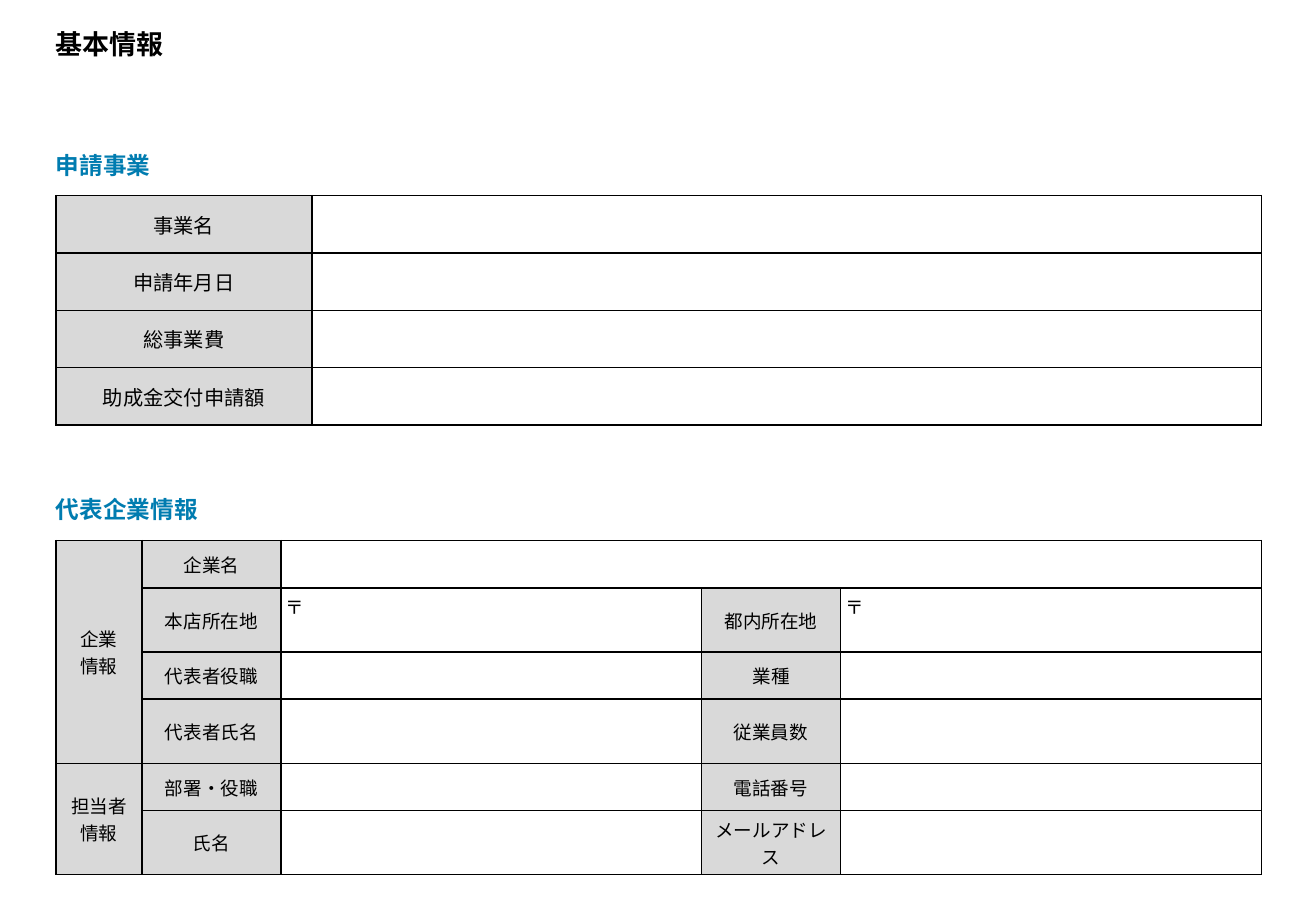
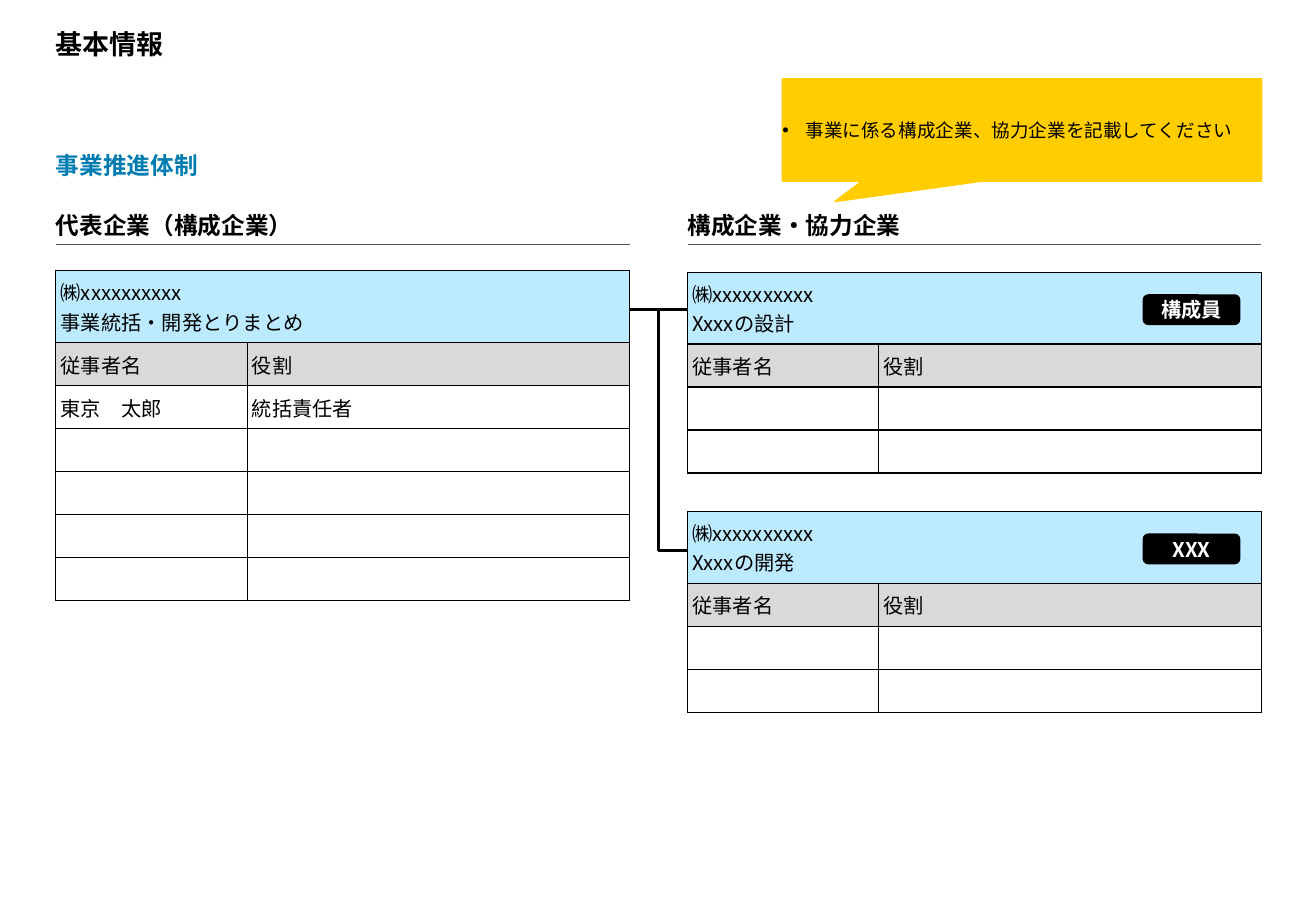
from dataclasses import dataclass

from lxml.etree import SubElement
from pptx import Presentation
from pptx.dml.color import RGBColor as RGB
from pptx.enum.shapes import MSO_CONNECTOR as LINK, MSO_SHAPE as SHAPE
from pptx.enum.text import MSO_ANCHOR as ANCHOR, PP_ALIGN as ALIGN
from pptx.oxml.ns import qn
from pptx.util import Inches, Pt


@dataclass(frozen=True)
class Theme:
    font: str = "Noto Sans CJK JP"
    form_font: str = "Arial"
    black: str = "000000"
    white: str = "FFFFFF"
    accent: str = "007CB0"
    label: str = "D9D9D9"
    company: str = "BCEBFF"
    note: str = "FFCD00"
    rule: str = "53565A"
    title: int = 16
    heading: int = 14
    body: int = 12
    small: int = 11


@dataclass(frozen=True)
class Cell:
    text: str = ""
    fill: str = ""
    align: ALIGN = ALIGN.LEFT
    anchor: ANCHOR = ANCHOR.MIDDLE
    span: tuple = (1, 1)


T = Theme()
SLIDE_W, SLIDE_H = 10.83, 7.5
LEFT, WIDTH, HALF = 4.25, 91.6, 43.6
RIGHT = LEFT + WIDTH - HALF
BLANK = Cell()


def col(n):
    return Inches(SLIDE_W * n / 100)


def row(n):
    return Inches(SLIDE_H * n / 100)


def grid(x, y, w, h):
    return col(x), row(y), col(w), row(h)


def write(tf, text, size, color=T.black, bold=False, align=ALIGN.LEFT, font=T.font):
    for i, line in enumerate(text.split("\n")):
        p = tf.paragraphs[0] if i == 0 else tf.add_paragraph()
        p.alignment = align
        if not line:
            SubElement(p._p, qn("a:endParaRPr"), sz=str(size * 100))
            continue
        r = p.add_run()
        r.text = line
        r.font.size, r.font.bold, r.font.name = Pt(size), bold, font
        r.font.color.rgb = RGB.from_string(color)
        SubElement(r._r.get_or_add_rPr(), qn("a:ea"), typeface=T.font)


def frame(sp):
    tf = sp.text_frame
    tf.word_wrap = True
    tf.vertical_anchor = ANCHOR.MIDDLE
    tf.margin_left = tf.margin_right = tf.margin_top = tf.margin_bottom = 0
    return tf


def text(s, x, y, w, h, words, size, color=T.black):
    tf = frame(s.shapes.add_textbox(*grid(x, y, w, h)))
    write(tf, words, size, color, bold=True)
    return tf


def title(s, words):
    tf = text(s, LEFT, 2.27, WIDTH, 4.67, words, T.title)
    tf.paragraphs[0].line_spacing = 1.1


def heading(s, y, words):
    text(s, LEFT, y, HALF, 6.8, words, T.heading, T.accent)


def line(s, x1, y1, x2, y2, color=T.black, width=1.5, kind=LINK.STRAIGHT):
    sp = s.shapes.add_connector(kind, col(x1), row(y1), col(x2), row(y2))
    sp.line.color.rgb = RGB.from_string(color)
    sp.line.width = Pt(width)
    SubElement(sp._element.spPr, qn("a:effectLst"))
    return sp


def elbow(s, x1, y1, x2, y2):
    sp = line(s, x1, y1, x2, y2, kind=LINK.ELBOW)
    guides = sp._element.spPr.find(qn("a:prstGeom")).get_or_add_avLst()
    SubElement(guides, qn("a:gd"), name="adj1", fmla="val 0")


def column_title(s, x, words):
    text(s, x, 23.07, HALF, 3.2, words, T.heading)
    line(s, x, 26.8, x + HALF, 26.8, T.rule, 0.75)


def block(s, kind, x, y, w, h, color):
    sp = s.shapes.add_shape(kind, *grid(x, y, w, h))
    sp.shadow.inherit = False
    sp.fill.solid()
    sp.fill.fore_color.rgb = sp.line.color.rgb = RGB.from_string(color)
    sp.line.width = Pt(1)
    return sp


def badge(s, y, words):
    sp = block(s, SHAPE.ROUNDED_RECTANGLE, 86.89, y, 7.3, 3.2, T.black)
    write(frame(sp), words, T.body, T.white, True, ALIGN.CENTER)


def callout(s, words):
    sp = block(s, SHAPE.RECTANGULAR_CALLOUT, 59.46, 8.67, 36.4, 11.2, T.note)
    sp.adjustments[0], sp.adjustments[1] = -0.39, 0.7
    tf = frame(sp)
    pPr = tf.paragraphs[0]._p.get_or_add_pPr()
    pPr.set("marL", str(Inches(0.19)))
    pPr.set("indent", str(-Inches(0.19)))
    SubElement(pPr, qn("a:buFont"), typeface="Arial")
    SubElement(pPr, qn("a:buChar"), char="•")
    write(tf, words, T.small)


def border(cell, width):
    tcPr = cell._tc.get_or_add_tcPr()
    for side in ("lnL", "lnR", "lnT", "lnB"):
        ln = SubElement(tcPr, qn(f"a:{side}"), w=str(Pt(width)))
        SubElement(SubElement(ln, qn("a:solidFill")), qn("a:srgbClr"), val=T.black)


def table(s, x, y, widths, heights, rows, size, edge, font=T.font):
    box = grid(x, y, sum(widths), sum(heights))
    tbl = s.shapes.add_table(len(heights), len(widths), *box).table
    tbl.first_row = tbl.horz_banding = False
    for i, w in enumerate(widths):
        tbl.columns[i].width = col(w)
    for i, h in enumerate(heights):
        tbl.rows[i].height = row(h)
    for i, cells in enumerate(rows):
        for j, item in enumerate(cells):
            c = tbl.cell(i, j)
            border(c, edge)
            if item.fill:
                c.fill.solid()
                c.fill.fore_color.rgb = RGB.from_string(item.fill)
            else:
                c.fill.background()
            c.vertical_anchor = item.anchor
            c.margin_left = c.margin_right = Inches(0.04)
            c.margin_top = c.margin_bottom = Inches(0.04)
            write(c.text_frame, item.text, size, align=item.align, font=font)
            if item.span != (1, 1):
                down, across = item.span
                c.merge(tbl.cell(i + down - 1, j + across - 1))


def label(words, span=(1, 1)):
    return Cell(words, T.label, ALIGN.CENTER, span=span)


def company(s, x, y, words, members, blanks):
    rows = [[Cell(words, T.company, span=(1, 2)), BLANK],
            [Cell("従事者名", T.label), Cell("役割", T.label)]]
    rows += [[Cell(name), Cell(role)] for name, role in members]
    rows += [[BLANK, BLANK]] * blanks
    heights = [7.9] + [4.72] * (len(rows) - 1)
    table(s, x, y, [HALF / 3, HALF * 2 / 3], heights, rows, T.body, 0.75)


def basic_info(s):
    title(s, "基本情報")
    heading(s, 14.67, "申請事業")
    names = ["事業名", "申請年月日", "総事業費", "助成金交付申請額"]
    table(s, LEFT, 21.47, [19.45, WIDTH - 19.45], [6.3] * len(names),
          [[label(n), BLANK] for n in names], T.body, 1, T.form_font)

    heading(s, 52.53, "代表企業情報")
    postal = Cell("〒", anchor=ANCHOR.TOP)
    pairs = [("本店所在地", "都内所在地", postal), ("代表者役職", "業種", BLANK),
             ("代表者氏名", "従業員数", BLANK), ("部署・役職", "電話番号", BLANK),
             ("氏名", "メールアドレス", BLANK)]
    rows = [[BLANK, label("企業名"), Cell(span=(1, 3)), BLANK, BLANK]]
    rows += [[BLANK, label(a), value, label(b), value] for a, b, value in pairs]
    rows[0][0] = label("企業\n情報", (4, 1))
    rows[4][0] = label("担当者\n情報", (2, 1))
    group, name = 6.54, 10.56
    value = (WIDTH - group) / 2 - name
    table(s, LEFT, 59.33, [group] + [name, value] * 2, [5.2, 7.03] * 3,
          rows, T.small, 1)


def structure(s):
    title(s, "基本情報")
    heading(s, 14.67, "事業推進体制")
    column_title(s, LEFT, "代表企業（構成企業）")
    column_title(s, RIGHT, "構成企業・協力企業")
    company(s, LEFT, 29.73, "㈱xxxxxxxxxx\n事業統括・開発とりまとめ",
            [("東京　太郎", "統括責任者")], 4)
    partners = [(29.87, "設計", "構成員"), (56.13, "開発", "XXX")]
    for y, task, role in partners:
        company(s, RIGHT, y, f"㈱xxxxxxxxxx\nXxxxの{task}", [], 2)
        badge(s, y + 2.53, role)
    line(s, LEFT + HALF, 34, RIGHT, 34)
    elbow(s, (LEFT + HALF + RIGHT) / 2, 34, RIGHT, 60.4)
    callout(s, "事業に係る構成企業、協力企業を記載してください")


def main():
    prs = Presentation()
    prs.slide_width, prs.slide_height = Inches(SLIDE_W), Inches(SLIDE_H)
    for build in (basic_info, structure):
        build(prs.slides.add_slide(prs.slide_layouts[6]))
    prs.save("out.pptx")


if __name__ == "__main__":
    main()
